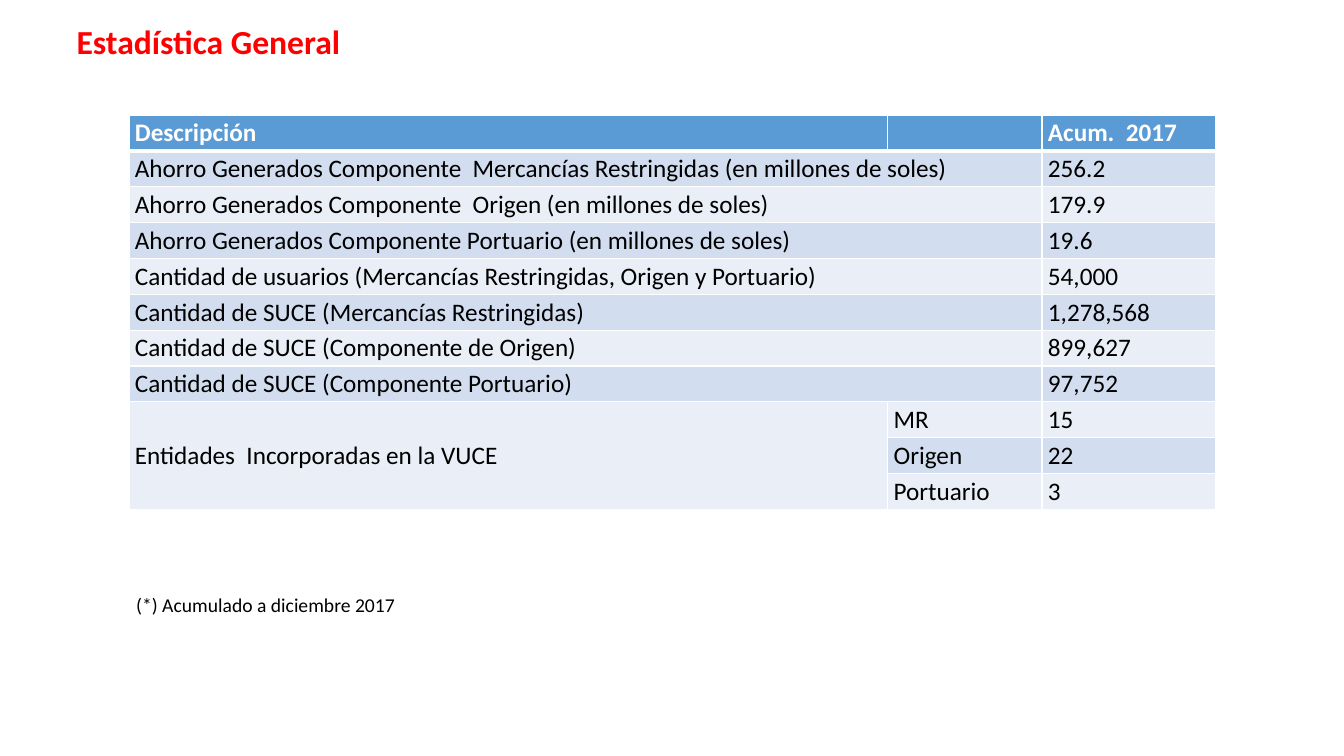
from lxml.etree import SubElement
from pptx import Presentation
from pptx.dml.color import RGBColor
from pptx.enum.text import MSO_ANCHOR
from pptx.oxml.ns import qn
from pptx.util import Cm, Pt

# Content
TITLE = "Estadística General"
FOOTNOTE = "(*) Acumulado a diciembre 2017"
HEADER = ("Descripción", "", "Acum.  2017")
TOTALS = [
    ("Ahorro Generados Componente  Mercancías Restringidas (en millones de soles)", "256.2"),
    ("Ahorro Generados Componente  Origen (en millones de soles)", "179.9"),
    ("Ahorro Generados Componente Portuario (en millones de soles)", "19.6"),
    ("Cantidad de usuarios (Mercancías Restringidas, Origen y Portuario)", "54,000"),
    ("Cantidad de SUCE (Mercancías Restringidas)", "1,278,568"),
    ("Cantidad de SUCE (Componente de Origen)", "899,627"),
    ("Cantidad de SUCE (Componente Portuario)", "97,752"),
]
ENTITIES = "Entidades  Incorporadas en la VUCE"
ENTITY_COUNTS = [("MR", "15"), ("Origen", "22"), ("Portuario", "3")]

# Style
FONT = "Calibri"
WHITE, BLACK, RED = "FFFFFF", "000000", "FF0000"
HEADER_FILL = "5B9BD5"
BANDS = ("D2DEEF", "EAEFF7")
COLUMN_WIDTHS = (19.12, 3.89, 4.38)
ROW_HEIGHT = 0.9


def color(hex_code):
    return RGBColor.from_string(hex_code)


def style(paragraph, size, ink, bold=False):
    font = paragraph.font
    font.name, font.size, font.bold = FONT, Pt(size), bold
    font.color.rgb = color(ink)


def add_text(slide, text, left, top, width, height, size, ink, bold=False):
    frame = slide.shapes.add_textbox(Cm(left), Cm(top), Cm(width), Cm(height)).text_frame
    frame.word_wrap = True
    frame.text = text
    style(frame.paragraphs[0], size, ink, bold)


def add_borders(cell, bottom_width):
    properties = cell._tc.get_or_add_tcPr()
    for side, width in (("L", 1), ("R", 1), ("T", 1), ("B", bottom_width)):
        line = SubElement(properties, qn(f"a:ln{side}"), w=str(Pt(width)))
        SubElement(SubElement(line, qn("a:solidFill")), qn("a:srgbClr"), val=WHITE)


def fill_cell(cell, text, is_header, fill):
    cell.margin_left = cell.margin_right = Cm(0.15)
    cell.margin_top = cell.margin_bottom = Cm(0.07)
    add_borders(cell, 3 if is_header else 1)
    cell.fill.solid()
    cell.fill.fore_color.rgb = color(fill)
    cell.text = text
    style(cell.text_frame.paragraphs[0], 18, WHITE if is_header else BLACK, is_header)


prs = Presentation()
prs.slide_width, prs.slide_height = Cm(33.87), Cm(19.05)
slide = prs.slides.add_slide(prs.slide_layouts[6])

# Title and footnote
add_text(slide, TITLE, 1.68, 0.41, 32.03, 1.28, 24, RED, True)
add_text(slide, FOOTNOTE, 3.18, 14.81, 7.04, 0.85, 14, BLACK)

# Table: totals span two columns, the entities label spans its counts
rows = [HEADER]
rows += [(label, "", total) for label, total in TOTALS]
first_entity = len(rows)
rows += [(ENTITIES if i == 0 else "", *count) for i, count in enumerate(ENTITY_COUNTS)]

table = slide.shapes.add_table(
    len(rows), len(HEADER), Cm(3.25), Cm(2.9),
    Cm(sum(COLUMN_WIDTHS)), Cm(ROW_HEIGHT * len(rows))).table
for column, width in zip(table.columns, COLUMN_WIDTHS):
    column.width = Cm(width)
for r, row in enumerate(rows):
    table.rows[r].height = Cm(ROW_HEIGHT)
    fill = BANDS[(r - 1) % 2] if r else HEADER_FILL
    for c, text in enumerate(row):
        fill_cell(table.cell(r, c), text, r == 0, fill)

for r in range(1, first_entity):
    table.cell(r, 0).merge(table.cell(r, 1))
entities = table.cell(first_entity, 0)
entities.merge(table.cell(len(rows) - 1, 0))
entities.vertical_anchor = MSO_ANCHOR.MIDDLE

prs.save("out.pptx")
